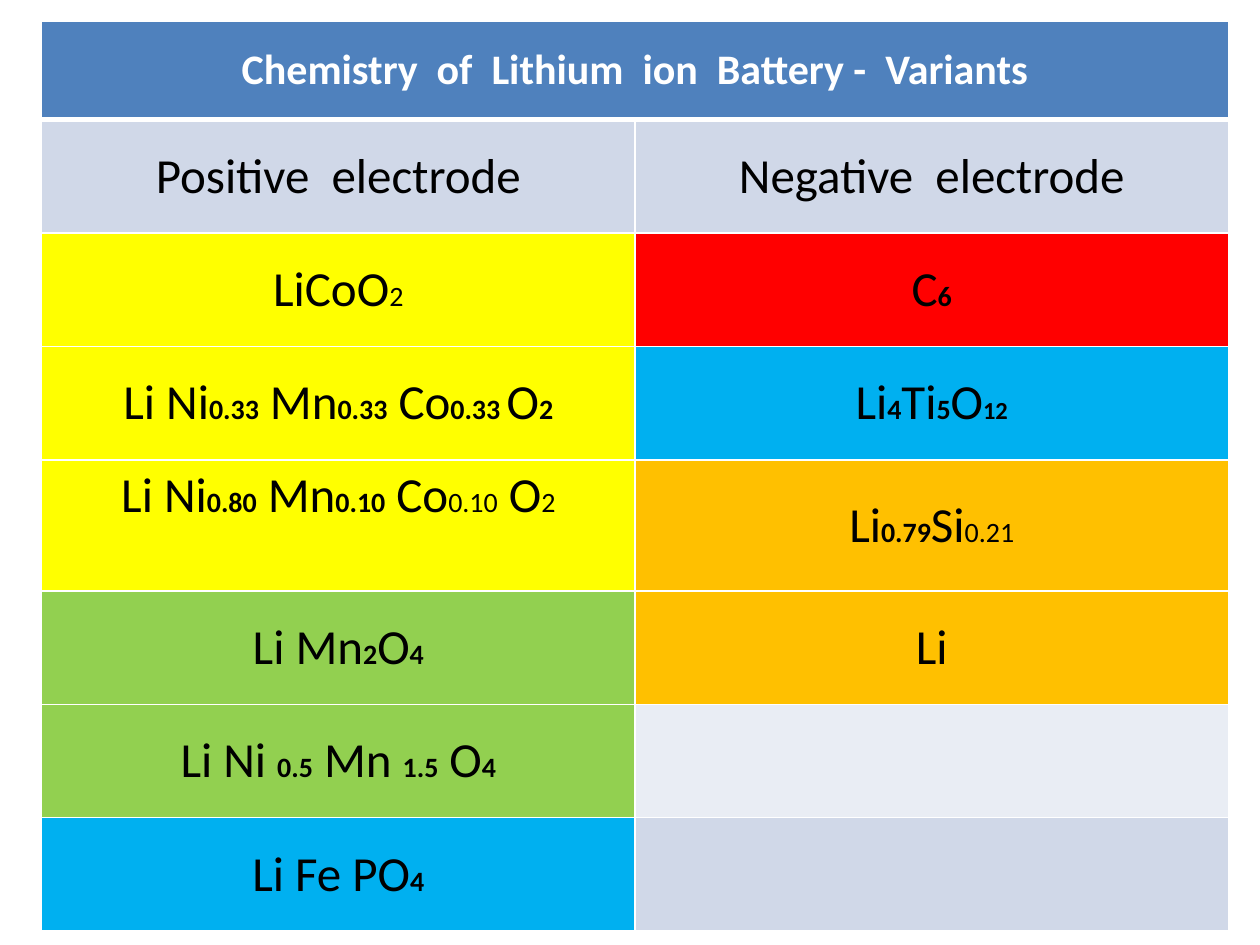
from dataclasses import dataclass

import pptx
import pptx.dml.color
import pptx.enum.text
import pptx.oxml
import pptx.oxml.ns
import pptx.util


@dataclass(frozen=True)
class Theme:
    font: str = "Calibri"
    title_size: int = 24
    body_size: int = 28
    header: str = "4F81BD"
    band_dark: str = "D0D8E8"
    band_light: str = "E9EDF4"
    yellow: str = "FFFF00"
    red: str = "FF0000"
    blue: str = "00B0F0"
    orange: str = "FFC000"
    green: str = "92D050"
    white: str = "FFFFFF"
    black: str = "000000"


THEME = Theme()
WIDTH, HEIGHT = 10, 7.5
LEFT, TOP, COLUMN_WIDTH = 0.33, 0.17, 4.71
TITLE_ROW, BODY_ROW, TALL_ROW = 0.78, 0.9, 1.04
TALL_INDEX = 4

TITLE = "Chemistry  of  Lithium  ion  Battery -  Variants"

# Formulas alternate base text and subscripts, split by "|".
# The first letter of a subscript picks its size and weight.
SUBSCRIPTS = {"*": (16, True), "~": (14, True), "-": (16, False)}
ROWS = [
    [("Positive  electrode", THEME.band_dark), ("Negative  electrode", THEME.band_dark)],
    [("LiCoO|-2", THEME.yellow), ("C|*6", THEME.red)],
    [("Li Ni|*0.33| Mn|*0.33| Co|*0.33 |O|*2", THEME.yellow),
     ("Li|*4|Ti|*5|O|~12", THEME.blue)],
    [("Li Ni|*0.80| Mn|*0.10| Co|-0.10| O|-2", THEME.yellow),
     ("Li|*0.79|Si|-0.21", THEME.orange)],
    [("Li Mn|*2|O|*4", THEME.green), ("Li", THEME.orange)],
    [("Li Ni |*0.5| Mn |*1.5| O|*4", THEME.green), ("", THEME.band_light)],
    [("Li Fe PO|*4", THEME.blue), ("", THEME.band_dark)],
]


def rgb(color):
    return pptx.dml.color.RGBColor.from_string(color)


def set_borders(cell, bottom=1):
    """Draw white lines on all four sides; widths are in points."""
    properties = cell._tc.get_or_add_tcPr()
    for index, (side, width) in enumerate(zip("LRTB", (1, 1, 1, bottom))):
        line = pptx.oxml.parse_xml(
            f'<a:ln{side} {pptx.oxml.ns.nsdecls("a")} w="{pptx.util.Pt(width)}">'
            f'<a:solidFill><a:srgbClr val="{THEME.white}"/></a:solidFill></a:ln{side}>')
        properties.insert(index, line)


def style_cell(cell, fill, bottom=1):
    cell.fill.solid()
    cell.fill.fore_color.rgb = rgb(fill)
    cell.vertical_anchor = pptx.enum.text.MSO_ANCHOR.MIDDLE
    cell.text_frame.paragraphs[0].alignment = pptx.enum.text.PP_ALIGN.CENTER
    set_borders(cell, bottom)


def add_run(paragraph, text, size, bold=False, color=THEME.black):
    run = paragraph.add_run()
    run.text = text
    run.font.name = THEME.font
    run.font.size = pptx.util.Pt(size)
    run.font.bold = bold
    run.font.color.rgb = rgb(color)


def write_formula(paragraph, formula):
    for index, part in enumerate(formula.split("|") if formula else []):
        if index % 2:
            add_run(paragraph, part[1:], *SUBSCRIPTS[part[0]])
        else:
            add_run(paragraph, part, THEME.body_size)


def add_variants_table(slide):
    heights = [TITLE_ROW] + [BODY_ROW] * len(ROWS)
    heights[TALL_INDEX] = TALL_ROW
    inches = pptx.util.Inches
    table = slide.shapes.add_table(
        len(heights), 2, inches(LEFT), inches(TOP),
        inches(2 * COLUMN_WIDTH), inches(sum(heights))).table
    for column in table.columns:
        column.width = inches(COLUMN_WIDTH)
    for row, height in zip(table.rows, heights):
        row.height = inches(height)

    # Title across both columns
    title = table.cell(0, 0)
    title.merge(table.cell(0, 1))
    for column in range(2):
        style_cell(table.cell(0, column), THEME.header, bottom=3)
    add_run(title.text_frame.paragraphs[0], TITLE, THEME.title_size, True, THEME.white)

    # Electrode materials
    for row, entries in enumerate(ROWS, start=1):
        for column, (formula, fill) in enumerate(entries):
            cell = table.cell(row, column)
            style_cell(cell, fill)
            write_formula(cell.text_frame.paragraphs[0], formula)

    # The formula in the tall row sits at the top
    table.cell(TALL_INDEX, 0).vertical_anchor = pptx.enum.text.MSO_ANCHOR.TOP


def main():
    presentation = pptx.Presentation()
    presentation.slide_width = pptx.util.Inches(WIDTH)
    presentation.slide_height = pptx.util.Inches(HEIGHT)
    slide = presentation.slides.add_slide(presentation.slide_layouts[6])
    add_variants_table(slide)
    presentation.save("out.pptx")


if __name__ == "__main__":
    main()
